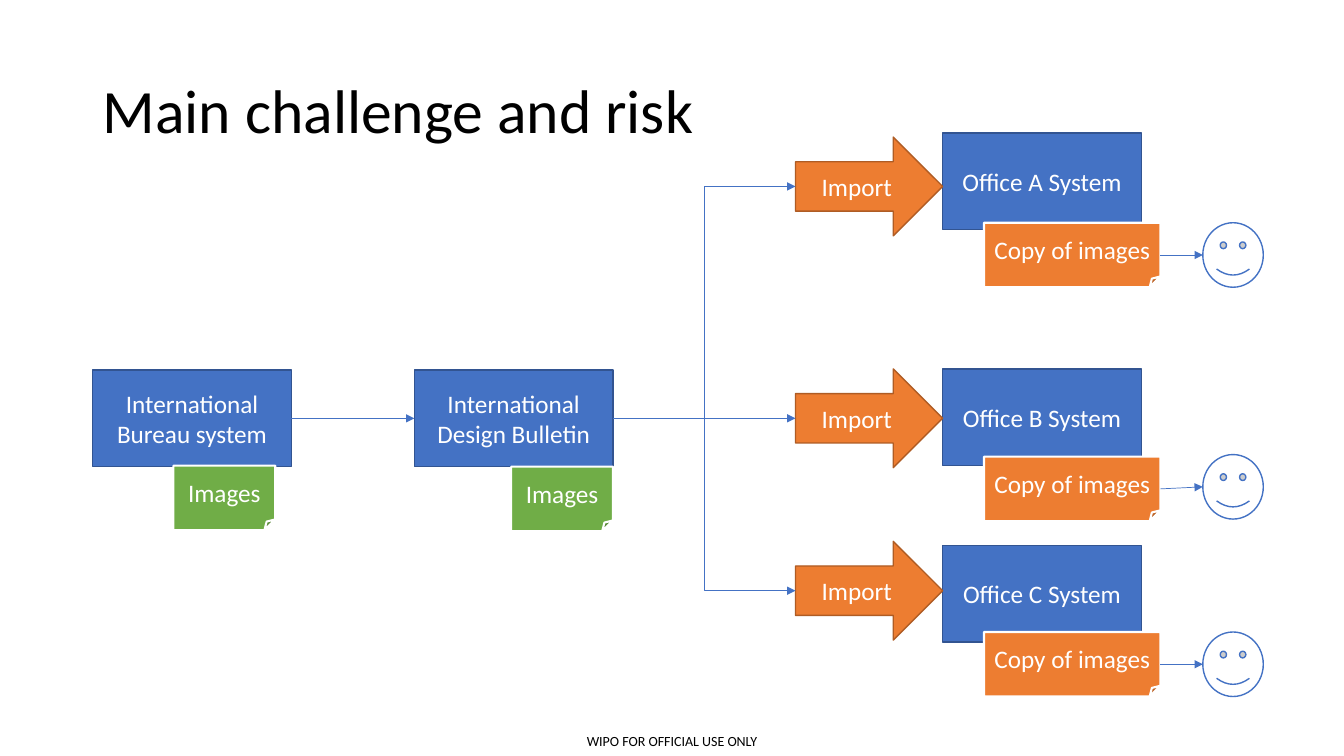
import pptx
import pptx.util
import pptx.dml.color
import pptx.enum.shapes
import pptx.enum.text
import pptx.oxml

SHAPE = pptx.enum.shapes.MSO_SHAPE
CONNECTOR = pptx.enum.shapes.MSO_CONNECTOR
ALIGN = pptx.enum.text.PP_ALIGN
ANCHOR = pptx.enum.text.MSO_ANCHOR
NS = 'xmlns:a="http://schemas.openxmlformats.org/drawingml/2006/main"'

BLUE, ORANGE, GREEN = "4472C4", "ED7D31", "70AD47"
DARK_BLUE, DARK_ORANGE = "325491", "AF5C24"
WHITE, BLACK = "FFFFFF", "000000"


def px(n):
    return pptx.util.Emu(n * 9144)


def color(value):
    return pptx.dml.color.RGBColor.from_string(value)


class Deck:
    font = "Calibri"
    label_size = 18
    link_color = BLUE
    link_width = 0.5

    def __init__(self):
        self.prs = pptx.Presentation()
        self.prs.slide_width = pptx.util.Inches(13.33)
        self.prs.slide_height = pptx.util.Inches(7.5)
        self.s = self.prs.slides.add_slide(self.prs.slide_layouts[6])

    def set_text(self, sp, text, size, value, align, inset, spacing=1.0):
        tf = sp.text_frame
        tf.word_wrap = True
        tf.vertical_anchor = ANCHOR.MIDDLE
        tf.margin_left = tf.margin_right = px(inset)
        tf.margin_top = tf.margin_bottom = px(inset // 2)
        p = tf.paragraphs[0]
        p.text = text
        p.alignment = align
        p.line_spacing = spacing
        p.font.name = self.font
        p.font.size = pptx.util.Pt(size)
        p.font.color.rgb = color(value)

    def text(self, box, text, size, align, inset, spacing=1.0):
        sp = self.s.shapes.add_textbox(*map(px, box))
        self.set_text(sp, text, size, BLACK, align, inset, spacing)

    def shape(self, kind, box, fill, line, width=1, text=""):
        sp = self.s.shapes.add_shape(kind, *map(px, box))
        sp.shadow.inherit = False
        sp.fill.solid()
        sp.fill.fore_color.rgb = color(fill)
        sp.line.color.rgb = color(line)
        sp.line.width = pptx.util.Pt(width)
        if text:
            self.set_text(sp, text, self.label_size, WHITE, ALIGN.CENTER, 5)
        return sp

    def system(self, x, y, text):
        return self.shape(SHAPE.RECTANGLE, (x, y, 197, 96), BLUE, DARK_BLUE, text=text)

    def note(self, x, y, w, fill, text):
        return self.shape(SHAPE.FOLDED_CORNER, (x, y, w, 64), fill, WHITE, 1.5, text)

    def arrow(self, x, y, text):
        return self.shape(SHAPE.RIGHT_ARROW, (x, y, 146, 98), ORANGE, DARK_ORANGE, text=text)

    def smiley(self, x, y):
        return self.shape(SHAPE.SMILEY_FACE, (x, y, 60, 64), WHITE, BLUE)

    def link(self, a, b, kind=CONNECTOR.STRAIGHT, join_end=True):
        c = self.s.shapes.add_connector(
            kind, a.left + a.width, a.top + a.height // 2, b.left, b.top + b.height // 2)
        c.begin_connect(a, 3)
        if join_end:
            c.end_connect(b, 1)
        c.line.color.rgb = color(self.link_color)
        c.line.width = pptx.util.Pt(self.link_width)
        c.line._get_or_add_ln().append(pptx.oxml.parse_xml(f'<a:tailEnd {NS} type="triangle"/>'))
        c._element.spPr.append(pptx.oxml.parse_xml(f"<a:effectLst {NS}/>"))


def main():
    d = Deck()
    d.text((564, 721, 205, 29), "WIPO FOR OFFICIAL USE ONLY", 10, ALIGN.CENTER, 0)
    d.text((92, 40, 1150, 145), "Main challenge and risk", 44, ALIGN.LEFT, 10, 0.9)

    bureau = d.system(92, 367, "International Bureau system")
    bulletin = d.system(411, 367, "International Design Bulletin")
    d.note(172, 462, 101, GREEN, "Images")
    d.note(507, 463, 101, GREEN, "Images")
    d.link(bureau, bulletin)

    offices = [
        ("A", 132, 136, 221, 221, CONNECTOR.ELBOW),
        ("B", 366, 366, 453, 451, CONNECTOR.STRAIGHT),
        ("C", 541, 537, 627, 627, CONNECTOR.ELBOW),
    ]
    for name, system_y, arrow_y, note_y, user_y, kind in offices:
        d.system(935, system_y, f"Office {name} System")
        step = d.arrow(789, arrow_y, "Import")
        copies = d.note(976, note_y, 175, ORANGE, "Copy of images")
        user = d.smiley(1193, user_y)
        d.link(bulletin, step, kind)
        d.link(copies, user, join_end=False)

    d.prs.save("out.pptx")


if __name__ == "__main__":
    main()
